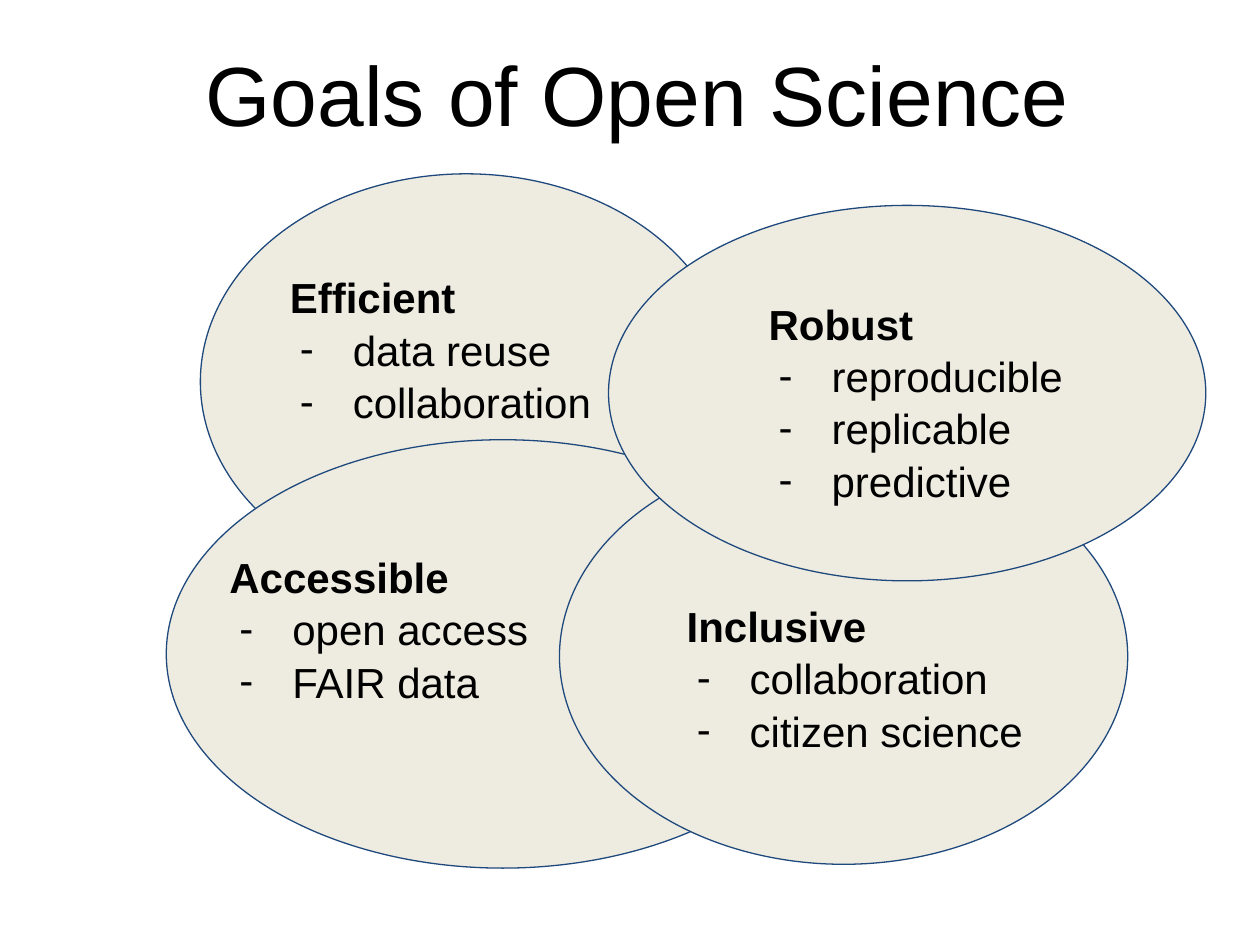
from lxml.etree import SubElement
from pptx import Presentation
from pptx.dml.color import RGBColor
from pptx.enum.shapes import MSO_SHAPE
from pptx.enum.text import MSO_ANCHOR, MSO_AUTO_SIZE, PP_ALIGN
from pptx.oxml.ns import qn
from pptx.util import Inches, Pt

HUES = {"ink": "000000", "fill": "EEECE1", "line": "1F497D"}
FACE = "Arial"
CELL = Inches(0.1)
COLS, ROWS = 100, 75

TITLE = ("Goals of Open Science", (3.6, 1.9, 94, 11))
GOALS = [
    ("Efficient", ["data reuse", "collaboration"],
     (15.9, 13.8, 42.2, 33), (6.1, 6.6, 29.3, 10.2)),
    ("Accessible", ["open access", "FAIR data"],
     (13.2, 34.9, 53.4, 34), (4, 7.7, 47.3, 11.4)),
    ("Inclusive", ["collaboration", "citizen science"],
     (44.4, 35.6, 45.1, 33), (9.1, 10.9, 39, 13.8)),
    ("Robust", ["reproducible", "replicable", "predictive"],
     (48.3, 16.3, 47.4, 29.8), (11.7, 6.2, 29.3, 10.2)),
]


def hue(name):
    """Return a named colour."""
    return RGBColor.from_string(HUES[name])


def place(shape, box):
    """Set a shape on the grid."""
    shape.left, shape.top, shape.width, shape.height = (
        round(n * CELL) for n in box)


def frame(shape, lines, anchor):
    """Fill a placeholder with plain lines and return its paragraphs."""
    text = shape.text_frame
    text.text = "\n".join(lines)
    text.word_wrap = True
    text.auto_size = MSO_AUTO_SIZE.NONE
    text.vertical_anchor = anchor
    text.margin_left = text.margin_right = CELL
    text.margin_top = text.margin_bottom = CELL
    return text.paragraphs


def style(para, size, bold, align):
    """Format a paragraph and its runs."""
    para.alignment = align
    para.space_before = para.space_after = Pt(0)
    for run in para.runs:
        font = run.font
        font.name, font.size, font.bold = FACE, Pt(size), bold
        font.color.rgb = hue("ink")


def mark(para, dash):
    """Give a paragraph a dash with a hanging indent, or no bullet."""
    props = para._p.get_or_add_pPr()
    props.set("marL", str(Inches(0.5 if dash else 0)))
    props.set("indent", str(Inches(-0.42 if dash else 0)))
    if not dash:
        SubElement(props, qn("a:buNone"))
        return
    tint = SubElement(props, qn("a:buClr"))
    SubElement(tint, qn("a:srgbClr"), val=HUES["ink"])
    SubElement(props, qn("a:buFont"), typeface=FACE)
    SubElement(props, qn("a:buChar"), char="-")


def head(shape, text, box):
    """Place the slide title."""
    place(shape, box)
    para, = frame(shape, [text], MSO_ANCHOR.MIDDLE)
    style(para, 48, False, PP_ALIGN.CENTER)


def goal(slide, body, name, items, box, inset):
    """Draw one ellipse with its list set inside the given box."""
    oval = slide.shapes.add_shape(MSO_SHAPE.OVAL, 0, 0, CELL, CELL)
    place(oval, box)
    oval.shadow.inherit = False
    oval.fill.solid()
    oval.fill.fore_color.rgb = hue("fill")
    oval.line.color.rgb = hue("line")
    oval.line.width = Pt(0.75)
    oval._element.addnext(body._element)
    left, top, wide, high = inset
    place(body, (box[0] + left, box[1] + top, wide, high))
    paras = frame(body, [name, *items], MSO_ANCHOR.TOP)
    for rank, para in enumerate(paras):
        style(para, 24, rank == 0, PP_ALIGN.LEFT)
        para.line_spacing = 1.04
        mark(para, rank > 0)


def main():
    """Build and save the slide."""
    deck = Presentation()
    deck.slide_width, deck.slide_height = COLS * CELL, ROWS * CELL
    slide = deck.slides.add_slide(
        deck.slide_layouts.get_by_name("Comparison"))
    head(slide.shapes.title, *TITLE)
    slots = [slot for slot in slide.placeholders
             if slot.placeholder_format.idx > 0]
    for body, part in zip(slots, GOALS):
        goal(slide, body, *part)
    deck.save("out.pptx")


if __name__ == "__main__":
    main()
